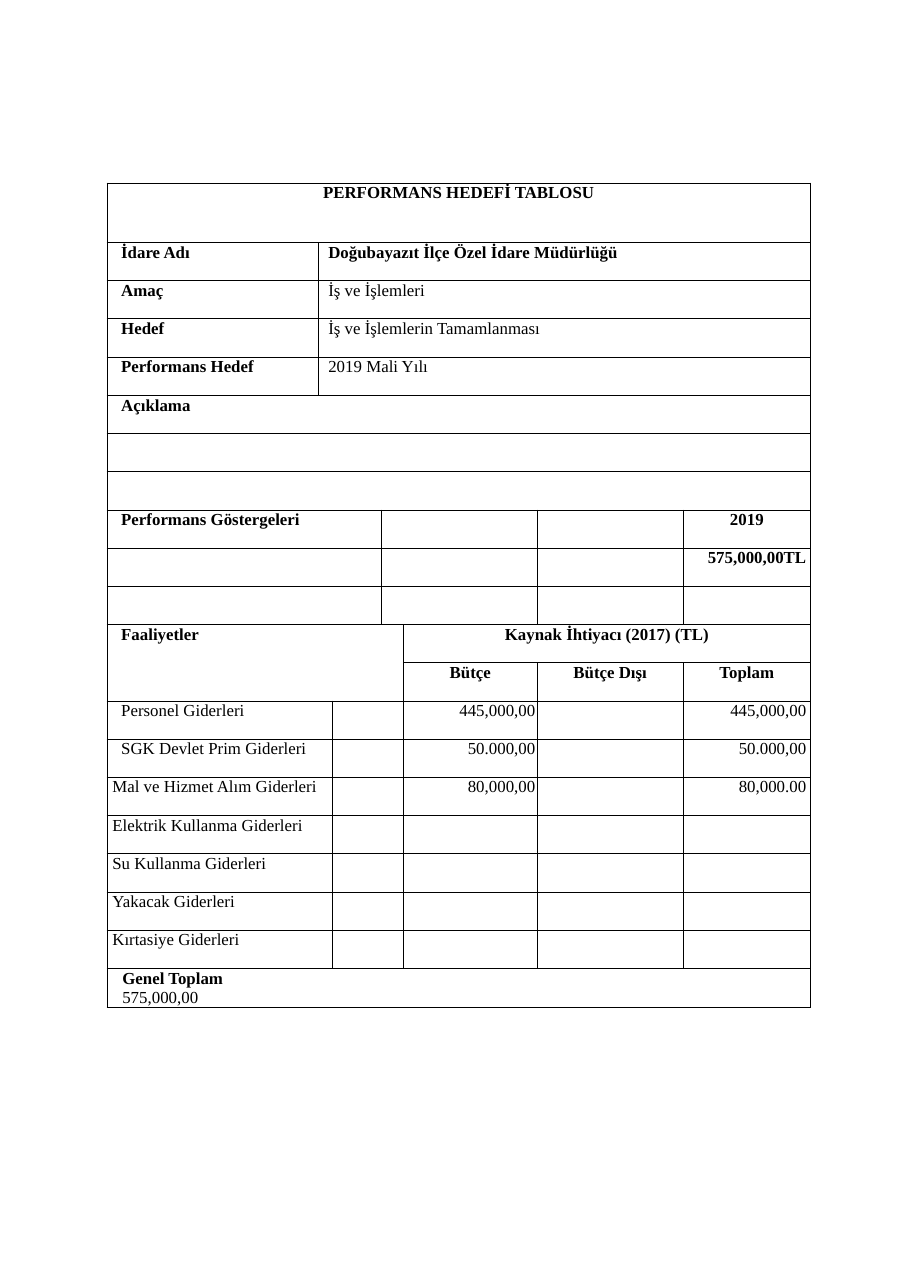
from dataclasses import dataclass

from lxml.etree import SubElement
from pptx import Presentation
from pptx.dml.color import RGBColor
from pptx.enum.text import PP_ALIGN
from pptx.oxml.ns import qn
from pptx.util import Inches, Pt


@dataclass(frozen=True)
class Theme:
    """Colours, font and sizes of the form."""
    ink: str = "000000"
    font: str = "Times New Roman"
    size: float = 11
    bold_leading: float = 12.8
    plain_leading: float = 12.5
    border: float = 0.5


COLUMNS = [1.92, 0.13, 0.44, 0.2, 1.22, 1.32, 1.16]
TITLE_HEIGHT = 0.54
TABLE_HEIGHT = 7.48
ROW_COUNT = 21

MERGED_COLUMNS = [
    ([0, 5, 6, 7, 20], [(0, 6)]),
    (range(1, 5), [(1, 6)]),
    (range(8, 11), [(0, 2), (3, 4)]),
    ([11], [(4, 6)]),
    (range(13, 20), [(0, 1), (2, 3)]),
]

GOALS = [
    ("İdare Adı", "Doğubayazıt İlçe Özel İdare Müdürlüğü"),
    ("Amaç", "İş ve İşlemleri"),
    ("Hedef", "İş ve İşlemlerin Tamamlanması"),
    ("Performans Hedef", "2019 Mali Yılı"),
]

EXPENSES = [
    ("Personel Giderleri", 0.13, "445,000,00", "445,000,00"),
    ("SGK Devlet Prim Giderleri", 0.13, "50.000,00", "50.000,00"),
    ("Mal ve Hizmet Alım Giderleri", 0.05, "80,000,00", "80,000.00"),
    ("Elektrik Kullanma Giderleri", 0.05, "", ""),
    ("Su Kullanma Giderleri", 0.05, "", ""),
    ("Yakacak Giderleri", 0.05, "", ""),
    ("Kırtasiye Giderleri", 0.05, "", ""),
]


def write(p, text, theme, bold=False, align=PP_ALIGN.LEFT, left=0, right=0):
    """Write text into a paragraph with the given format."""
    p.alignment = align
    p.line_spacing = Pt(theme.bold_leading if bold else theme.plain_leading)
    pPr = p._p.get_or_add_pPr()
    pPr.set("marL", str(Inches(left)))
    pPr.set("marR", str(Inches(right)))
    pPr.set("indent", "0")
    r = p.add_run()
    r.text = text
    r.font.name = theme.font
    r.font.size = Pt(theme.size)
    r.font.bold = bold
    r.font.color.rgb = RGBColor.from_string(theme.ink)


class FormSlide:
    """Hold the theme and the current slide."""

    def __init__(self, prs, theme):
        """Add a blank slide to the presentation."""
        self.theme = theme
        self.slide = prs.slides.add_slide(prs.slide_layouts[6])

    def table(self, left, top, widths, heights):
        """Add a plain ruled table."""
        frame = self.slide.shapes.add_table(
            len(heights), len(widths), Inches(left), Inches(top),
            Inches(sum(widths)), Inches(sum(heights)))
        table = frame.table
        table.first_row = table.horz_banding = False
        for column, width in zip(table.columns, widths):
            column.width = Inches(width)
        for row, height in zip(table.rows, heights):
            row.height = Inches(height)
        for cell in table.iter_cells():
            cell.margin_left = cell.margin_right = 0
            cell.margin_top = cell.margin_bottom = 0
            self.borders(cell)
            cell.fill.background()
        return table

    def borders(self, cell):
        """Rule all four sides of a cell."""
        tcPr = cell._tc.get_or_add_tcPr()
        for side in ("lnL", "lnR", "lnT", "lnB"):
            ln = SubElement(tcPr, qn(f"a:{side}"), w=str(Pt(self.theme.border)))
            fill = SubElement(ln, qn("a:solidFill"))
            SubElement(fill, qn("a:srgbClr"), val=self.theme.ink)

    def text(self, cell, text, **style):
        """Write the first paragraph of a cell."""
        write(cell.text_frame.paragraphs[0], text, self.theme, **style)

    def add_line(self, cell, text, **style):
        """Write a further paragraph in a cell."""
        write(cell.text_frame.add_paragraph(), text, self.theme, **style)


def main():
    """Build the performance target form."""
    prs = Presentation()
    prs.slide_width, prs.slide_height = Inches(8.26), Inches(11.69)
    s = FormSlide(prs, Theme())

    row_height = (TABLE_HEIGHT - TITLE_HEIGHT) / (ROW_COUNT - 1)
    heights = [TITLE_HEIGHT] + [row_height] * (ROW_COUNT - 1)
    table = s.table(0.97, 1.66, COLUMNS, heights)
    for rows, spans in MERGED_COLUMNS:
        for row in rows:
            for first, last in spans:
                table.cell(row, first).merge(table.cell(row, last))
    table.cell(11, 0).merge(table.cell(12, 3))

    label = dict(bold=True, left=0.13)
    heading = dict(bold=True, align=PP_ALIGN.CENTER)
    s.text(table.cell(0, 0), "PERFORMANS HEDEFİ TABLOSU", **heading)
    for row, (name, value) in enumerate(GOALS, 1):
        s.text(table.cell(row, 0), name, **label)
        s.text(table.cell(row, 1), value, bold=row == 1, left=0.09)

    for row, name in [(5, "Açıklama"), (8, "Performans Göstergeleri"),
                      (11, "Faaliyetler")]:
        s.text(table.cell(row, 0), name, **label)
    for row, column, name in [(8, 6, "2019"),
                              (11, 4, "Kaynak İhtiyacı (2017) (TL)"),
                              (12, 4, "Bütçe"), (12, 5, "Bütçe Dışı"),
                              (12, 6, "Toplam")]:
        s.text(table.cell(row, column), name, **heading)
    s.text(table.cell(9, 6), "575,000,00TL", bold=True,
           align=PP_ALIGN.RIGHT, right=0.04)

    for row, (name, indent, budget, total) in enumerate(EXPENSES, 13):
        s.text(table.cell(row, 0), name, left=indent)
        for column, amount, gap in [(4, budget, 0.02), (6, total, 0.04)]:
            if amount:
                s.text(table.cell(row, column), amount,
                       align=PP_ALIGN.RIGHT, right=gap)

    s.text(table.cell(20, 0), "Genel Toplam", bold=True, left=0.14)
    s.add_line(table.cell(20, 0), "575,000,00", left=0.14)
    prs.save("out.pptx")


if __name__ == "__main__":
    main()
